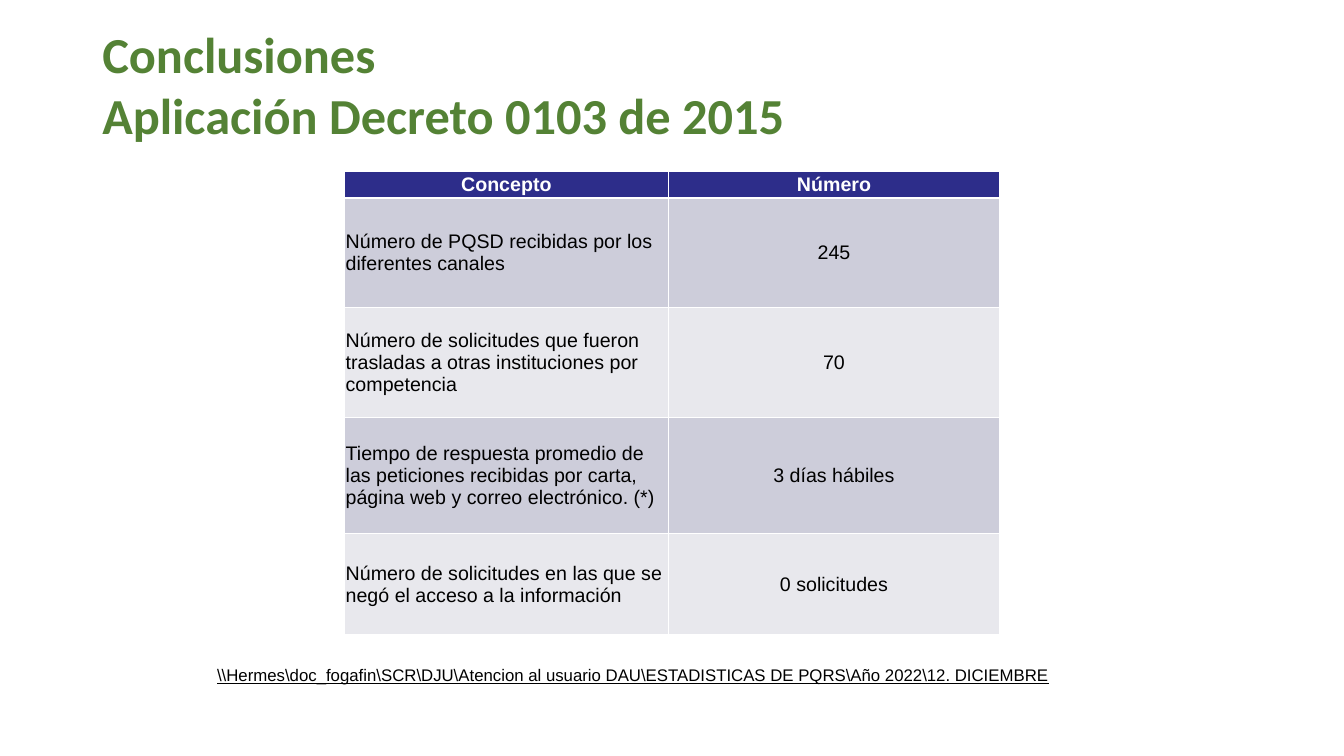
"""Build the conclusions slide on Decreto 0103 de 2015."""
import lxml.etree
import pptx
import pptx.dml.color
import pptx.enum.text
import pptx.oxml.ns
import pptx.util

Pt = pptx.util.Pt
ALIGN = pptx.enum.text.PP_ALIGN
MIDDLE = pptx.enum.text.MSO_ANCHOR.MIDDLE

HEADING = "Conclusiones\vAplicación Decreto 0103 de 2015"
FIGURES = [
    ("Concepto", "Número"),
    ("Número de PQSD recibidas por los diferentes canales", "245"),
    ("Número de solicitudes que fueron trasladas a otras instituciones por competencia", "70"),
    ("Tiempo de respuesta promedio de las peticiones recibidas por carta, "
     "página web y correo electrónico. (*)", "3 días hábiles"),
    ("Número de solicitudes en las que se negó el acceso a la información", "0 solicitudes"),
]
SOURCE_PATH = (r"\\Hermes\doc_fogafin\SCR\DJU\Atencion al usuario DAU"
               r"\ESTADISTICAS DE PQRS\Año 2022\12. DICIEMBRE")

THEME = {
    "heading_font": "Calibri", "body_font": "Arial",
    "heading_size": 36, "table_size": 14, "source_size": 12,
    "green": "548235", "navy": "2D2D8A", "white": "FFFFFF", "black": "000000",
    "bands": ("CDCDDA", "E8E8ED"),
}
SLIDE_SIZE = (960, 540)
HEADING_BOX = (66, 8, 828, 104)
SOURCE_BOX = (148, 471.5, 687, 21.5)
TABLE_CORNER = (246.25, 122.5)
COLUMN_WIDTHS = (231, 237)
ROW_HEIGHTS = (18.7, 78.5, 78.5, 82.8, 72)


def color(name):
    return pptx.dml.color.RGBColor.from_string(THEME.get(name, name))


def style(paragraph, font, size, ink, align, bold=False, underline=None):
    paragraph.alignment = align
    paragraph.font.name = THEME[font]
    paragraph.font.size = Pt(THEME[size])
    paragraph.font.color.rgb = color(ink)
    paragraph.font.bold = bold
    paragraph.font.underline = underline


def add_text(slide, box, text, **look):
    frame = slide.shapes.add_textbox(*map(Pt, box)).text_frame
    frame.word_wrap = True
    frame.vertical_anchor = MIDDLE
    frame.text = text
    style(frame.paragraphs[0], **look)


def add_border(cell, side, width):
    properties = cell._tc.get_or_add_tcPr()
    qn = pptx.oxml.ns.qn
    line = lxml.etree.SubElement(properties, qn(f"a:ln{side}"), w=str(Pt(width)))
    fill = lxml.etree.SubElement(line, qn("a:solidFill"))
    lxml.etree.SubElement(fill, qn("a:srgbClr"), val=THEME["white"])


def fill_cell(cell, text, row, column):
    header = row == 0
    widths = {"L": 1, "R": 1, "T": 1.5 if row == 1 else 1, "B": 1.5 if header else 1}
    for side, width in widths.items():
        add_border(cell, side, width)
    cell.fill.solid()
    cell.fill.fore_color.rgb = color("navy" if header else THEME["bands"][(row - 1) % 2])
    cell.margin_left = cell.margin_right = cell.margin_top = Pt(0.7)
    cell.margin_bottom = 0
    cell.vertical_anchor = MIDDLE
    cell.text = text
    style(cell.text_frame.paragraphs[0], "body_font", "table_size",
          "white" if header else "black",
          ALIGN.CENTER if header or column else ALIGN.LEFT, bold=header)


def add_figures(slide):
    table = slide.shapes.add_table(
        len(FIGURES), len(COLUMN_WIDTHS), *map(Pt, TABLE_CORNER),
        Pt(sum(COLUMN_WIDTHS)), Pt(sum(ROW_HEIGHTS))).table
    for column, width in zip(table.columns, COLUMN_WIDTHS):
        column.width = Pt(width)
    for row, height in zip(table.rows, ROW_HEIGHTS):
        row.height = Pt(height)
    for row, entries in enumerate(FIGURES):
        for column, text in enumerate(entries):
            fill_cell(table.cell(row, column), text, row, column)


def main():
    deck = pptx.Presentation()
    deck.slide_width, deck.slide_height = map(Pt, SLIDE_SIZE)
    slide = deck.slides.add_slide(deck.slide_layouts[6])
    add_text(slide, HEADING_BOX, HEADING, font="heading_font", size="heading_size",
             ink="green", align=ALIGN.LEFT, bold=True)
    add_text(slide, SOURCE_BOX, SOURCE_PATH, font="body_font", size="source_size",
             ink="black", align=ALIGN.JUSTIFY, underline=True)
    add_figures(slide)
    deck.save("out.pptx")


if __name__ == "__main__":
    main()
